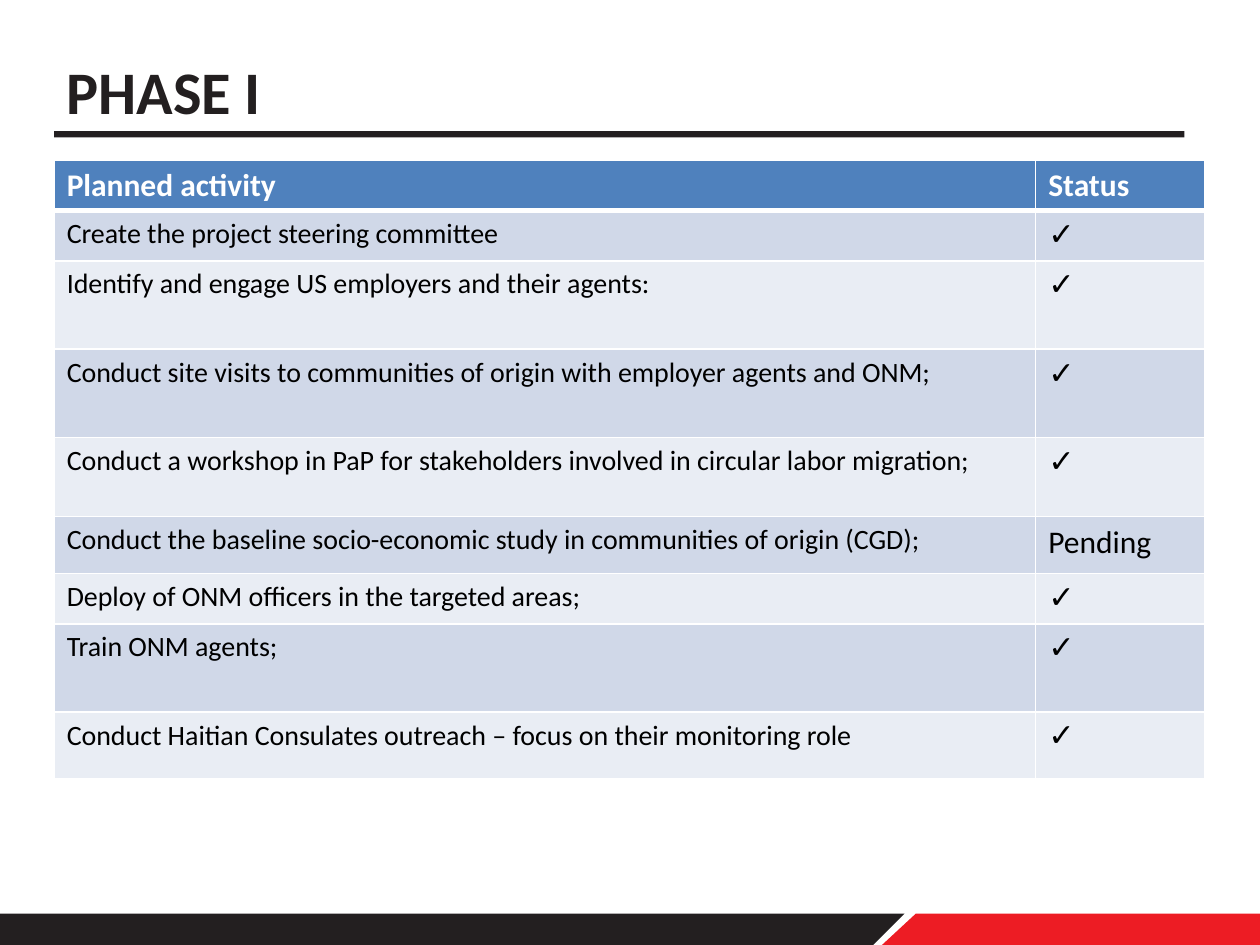
from pptx import Presentation
from pptx.dml.color import RGBColor
from pptx.enum.shapes import MSO_SHAPE
from pptx.oxml.xmlchemy import OxmlElement
from pptx.util import Inches, Pt

BLACK = RGBColor(0x00, 0x00, 0x00)
WHITE = RGBColor(0xFF, 0xFF, 0xFF)
CHARCOAL = RGBColor(0x23, 0x1F, 0x20)
RED = RGBColor(0xED, 0x1C, 0x24)
HEADER_BLUE = RGBColor(0x4F, 0x81, 0xBD)
BANDS = [RGBColor(0xD0, 0xD8, 0xE8), RGBColor(0xE9, 0xED, 0xF4)]

DONE = "✓"
# Activity, status, row height in inches
ACTIVITIES = [
    ("Create the project steering committee", DONE, 0.4),
    ("Identify and engage US employers and their agents:", DONE, 0.7),
    ("Conduct site visits to communities of origin with employer agents and ONM;", DONE, 0.7),
    ("Conduct a workshop in PaP for stakeholders involved in circular labor migration;", DONE, 0.63),
    ("Conduct the baseline socio-economic study in communities of origin (CGD);", "Pending", 0.45),
    ("Deploy of ONM officers in the targeted areas;", DONE, 0.4),
    ("Train ONM agents;", DONE, 0.7),
    ("Conduct Haitian Consulates outreach – focus on their monitoring role", DONE, 0.53),
]
HEADER_HEIGHT = 0.39


def paint(shape, color):
    shape.shadow.inherit = False
    shape.fill.solid()
    shape.fill.fore_color.rgb = color
    shape.line.fill.background()


def set_text(text_frame, text, size, color, bold=False, font_name="Calibri"):
    paragraph = text_frame.paragraphs[0]
    paragraph.text = text
    font = paragraph.font
    font.name, font.size, font.bold = font_name, Pt(size), bold
    font.color.rgb = color


def add_title(slide, left, top, width, height):
    # Rule under the heading
    rule = slide.shapes.add_shape(
        MSO_SHAPE.RECTANGLE, Inches(left), Inches(top + 0.66), Inches(width), Inches(0.05))
    paint(rule, CHARCOAL)
    # Heading
    heading = slide.shapes.add_textbox(
        Inches(left), Inches(top), Inches(width), Inches(height))
    heading.text_frame.word_wrap = True
    set_text(heading.text_frame, "PHASE I", 34.5, CHARCOAL, bold=True)


def add_footer(slide, left, top, width, height):
    right, bottom = left + width, top + height
    bands = [
        (CHARCOAL, [(left, top), (left + 7.18, top), (left + 6.93, bottom), (left, bottom)]),
        (RED, [(right, bottom), (left + 7, bottom), (left + 7.27, top), (right, top)]),
    ]
    for color, corners in bands:
        points = [(Inches(x), Inches(y)) for x, y in corners]
        builder = slide.shapes.build_freeform(*points[0])
        builder.add_line_segments(points[1:], close=True)
        paint(builder.convert_to_shape(), color)


def set_borders(cell, top_width, bottom_width):
    properties = cell._tc.get_or_add_tcPr()
    widths = {"a:lnL": 1, "a:lnR": 1, "a:lnT": top_width, "a:lnB": bottom_width}
    for position, (tag, width) in enumerate(widths.items()):
        line = OxmlElement(tag)
        line.set("w", str(Pt(width)))
        fill = OxmlElement("a:solidFill")
        color = OxmlElement("a:srgbClr")
        color.set("val", str(WHITE))
        fill.append(color)
        line.append(fill)
        properties.insert(position, line)


def fill_cell(cell, color, top_width=1, bottom_width=1):
    cell.fill.solid()
    cell.fill.fore_color.rgb = color
    set_borders(cell, top_width, bottom_width)


def add_activity_table(slide, left, top, width):
    heights = [HEADER_HEIGHT] + [height for _, _, height in ACTIVITIES]
    table = slide.shapes.add_table(
        len(heights), 2, Inches(left), Inches(top), Inches(width), Inches(sum(heights))).table
    status_width = 1.34
    table.columns[0].width = Inches(width - status_width)
    table.columns[1].width = Inches(status_width)
    for row, height in zip(table.rows, heights):
        row.height = Inches(height)

    # Header row
    for cell, label in zip(table.rows[0].cells, ("Planned activity", "Status")):
        fill_cell(cell, HEADER_BLUE, bottom_width=3)
        set_text(cell.text_frame, label, 18, WHITE, bold=True)

    # Banded activity rows
    for index, (activity, status, _) in enumerate(ACTIVITIES):
        activity_cell, status_cell = table.rows[index + 1].cells
        for cell in (activity_cell, status_cell):
            fill_cell(cell, BANDS[index % 2], top_width=3 if index == 0 else 1)
        set_text(activity_cell.text_frame, activity, 16, BLACK)
        status_font = "Arial" if status == DONE else "Calibri"
        set_text(status_cell.text_frame, status, 18, BLACK, font_name=status_font)


def main():
    presentation = Presentation()
    presentation.slide_width, presentation.slide_height = Inches(10), Inches(7.5)
    slide = presentation.slides.add_slide(presentation.slide_layouts[6])
    add_title(slide, 0.43, 0.38, 8.97, 0.68)
    add_footer(slide, 0, 7.25, 10, 0.25)
    add_activity_table(slide, 0.43, 1.27, 9.13)
    presentation.save("out.pptx")


if __name__ == "__main__":
    main()
